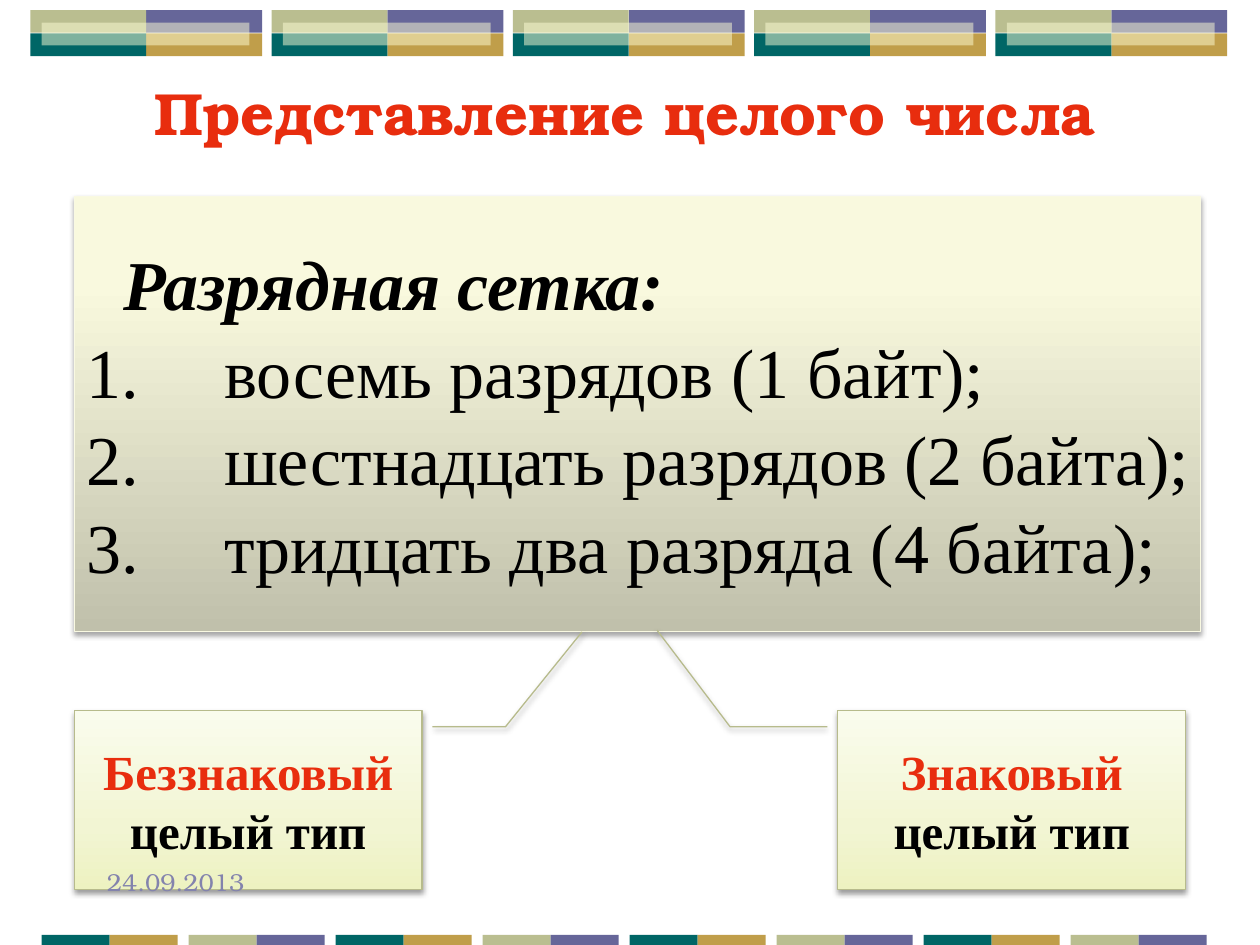
from dataclasses import dataclass
from lxml import etree
from pptx import Presentation
from pptx.dml.color import RGBColor
from pptx.enum.shapes import MSO_SHAPE
from pptx.enum.text import MSO_ANCHOR, PP_ALIGN
from pptx.oxml import parse_xml
from pptx.oxml.ns import nsdecls, qn
from pptx.util import Inches, Pt

RECT = MSO_SHAPE.RECTANGLE
CALL = MSO_SHAPE.LINE_CALLOUT_2
MID, TOP = MSO_ANCHOR.MIDDLE, MSO_ANCHOR.TOP
LEFT, MIDDLE = PP_ALIGN.LEFT, PP_ALIGN.CENTER


@dataclass(frozen=True)
class Theme:
    head: str = "TeX Gyre Bonum"
    body: str = "Times New Roman"
    red: str = "E82D0E"
    ink: str = "000000"
    date: str = "8383AD"
    teal: str = "006666"
    gold: str = "C09E4A"
    plum: str = "666699"
    sage: str = "BABE90"
    pale: str = "FEFED6"
    edge: str = "F9F9E2"
    rim: str = "B7BB8C"
    grid: tuple = ((0, "C0C0AB"), (80, "F9F9DE"), (100, "FBFBDE"))
    leaf: tuple = ((0, "EDF2C1"), (35, "F2F5D3"), (100, "FAFCED"))
    title: int = 34
    list: int = 40
    kind: int = 28
    small: int = 14


T = Theme()


def place(shape, box):
    for name, value in zip(("left", "top", "width", "height"), box):
        setattr(shape, name, Inches(value))


def put(item, form):
    for name, value in form.items():
        setattr(item, name, value)


def add_run(para, text, size, color, face=T.body, **form):
    run = para.add_run()
    run.text = text
    put(run.font, {"name": face, "size": Pt(size), **form})
    run.font.color.rgb = RGBColor.from_string(color)


def add_bar(slide, box, color, alpha=None):
    bar = slide.shapes.add_shape(RECT, *map(Inches, box))
    bar.shadow.inherit = False
    bar.fill.solid()
    bar.fill.fore_color.rgb = RGBColor.from_string(color)
    bar.line.fill.background()
    if alpha:
        tint = bar._element.spPr.find(".//" + qn("a:srgbClr"))
        etree.SubElement(tint, qn("a:alpha")).set("val", str(alpha * 1000))


def add_bands(slide):
    wide, high = 0.92, 0.18
    for i in range(5):
        x = 0.24 + i * 1.915
        for col, row, color in ((1, 0, T.plum), (1, 1, T.gold),
                                (0, 1, T.teal), (0, 0, T.sage)):
            add_bar(slide, (x + col * wide, 0.08 + row * 0.185, wide, high), color)
        add_bar(slide, (x + 0.09, 0.18, 1.65, high), T.pale, 50)
    for i in range(8):
        pair = ((T.teal, T.gold), (T.sage, T.plum))[i % 2]
        for j, color in enumerate(pair):
            add_bar(slide, (0.33 + i * 7 / 6 + j * 0.54, 7.42, 0.54, 0.08), color)


def add_panel(slide, kind, box, stops, edge, dist, alpha):
    panel = slide.shapes.add_shape(kind, *map(Inches, box))
    panel.fill.gradient()
    props = panel._element.spPr
    marks = "".join(f'<a:gs pos="{pos * 1000}"><a:srgbClr val="{color}"/></a:gs>'
                    for pos, color in stops)
    props.replace(props.find(qn("a:gradFill")), parse_xml(
        f'<a:gradFill {nsdecls("a")} rotWithShape="1"><a:gsLst>{marks}</a:gsLst>'
        '<a:lin ang="16200000" scaled="0"/></a:gradFill>'))
    panel.line.color.rgb = RGBColor.from_string(edge)
    panel.line.width = Pt(0.75)
    panel.shadow.inherit = False
    props.find(qn("a:effectLst")).append(parse_xml(
        f'<a:outerShdw {nsdecls("a")} blurRad="{Pt(3.1)}" dist="{Pt(dist)}" '
        'dir="5400000" rotWithShape="0"><a:srgbClr val="000000">'
        f'<a:alpha val="{alpha * 1000}"/></a:srgbClr></a:outerShdw>'))
    panel.text_frame.vertical_anchor = MID
    return panel


def add_grid(slide, head, items):
    panel = add_panel(slide, RECT, (0.59, 1.56, 8.94, 3.45), T.grid, T.edge, 1.8, 35)
    frame = panel.text_frame
    frame.word_wrap = False
    para = frame.paragraphs[0]
    para.alignment = LEFT
    para._p.get_or_add_pPr().set("marL", str(Inches(0.29)))
    add_run(para, head, T.list, T.ink, bold=True, italic=True)
    for item in items:
        para = frame.add_paragraph()
        put(para, {"alignment": LEFT, "space_before": Pt(2)})
        props = para._p.get_or_add_pPr()
        props.set("marL", str(Inches(1.09)))
        props.set("indent", str(-Inches(1.09)))
        etree.SubElement(props, qn("a:buFont")).set("typeface", T.body)
        etree.SubElement(props, qn("a:buAutoNum")).set("type", "arabicPeriod")
        add_run(para, item, T.list, T.ink)


def add_kind(slide, x, word, bends):
    panel = add_panel(slide, CALL, (x, 5.64, 2.76, 1.42), T.leaf, T.rim, 1.6, 38)
    for i, bend in enumerate(bends):
        panel.adjustments[i] = bend
    panel.text_frame.word_wrap = True
    para = panel.text_frame.paragraphs[0]
    para.alignment = MIDDLE
    add_run(para, word + " ", T.kind, T.red, bold=True)
    add_run(para, "целый тип", T.kind, T.ink, bold=True)


def add_title(slide, text):
    title = slide.shapes.title
    place(title, (0.31, 0.55, 9.3, 0.67))
    put(title.text_frame, {"vertical_anchor": MID, "word_wrap": True})
    para = title.text_frame.paragraphs[0]
    para.alignment = MIDDLE
    add_run(para, text, T.title, T.red, T.head, bold=True)


def add_date(slide, text):
    box = slide.shapes.add_textbox(*map(Inches, (0.75, 6.83, 2.08, 0.5)))
    put(box.text_frame, {"vertical_anchor": TOP, "word_wrap": True})
    add_run(box.text_frame.paragraphs[0], text, T.small, T.date, T.head)


def main():
    deck = Presentation()
    put(deck, {"slide_width": Inches(10), "slide_height": Inches(7.5)})
    slide = deck.slides.add_slide(deck.slide_layouts[5])
    add_bands(slide)
    add_title(slide, "Представление целого числа")
    add_grid(slide, "Разрядная сетка:", (
        "восемь разрядов (1 байт);",
        "шестнадцать разрядов (2 байта);",
        "тридцать два разряда (4 байта);"))
    add_kind(slide, 0.59, "Беззнаковый", (0.09, 1.03, 0.09, 1.24, -0.44, 1.46))
    add_kind(slide, 6.65, "Знаковый", (0.09, -0.03, 0.09, -0.31, -0.45, -0.52))
    add_date(slide, "24.09.2013")
    deck.save("out.pptx")


if __name__ == "__main__":
    main()
